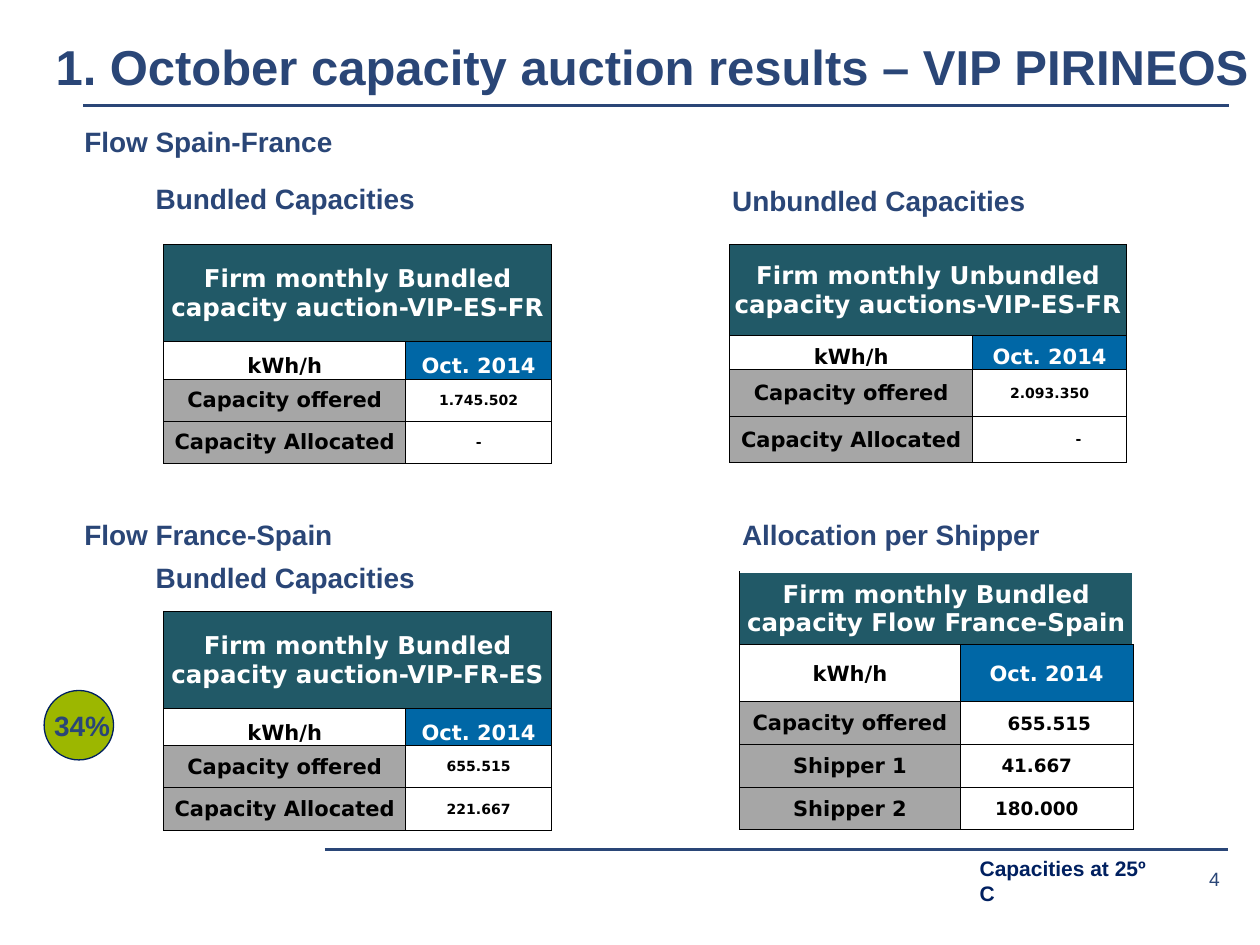
from lxml import etree
from pptx import Presentation
from pptx.dml.color import RGBColor
from pptx.enum.shapes import MSO_CONNECTOR, MSO_SHAPE
from pptx.enum.text import MSO_ANCHOR, MSO_AUTO_SIZE, PP_ALIGN
from pptx.oxml.ns import qn
from pptx.util import Cm, Pt

STRAIGHT = MSO_CONNECTOR.STRAIGHT
ELLIPSE = MSO_SHAPE.OVAL
TOP, MIDDLE, BOTTOM = MSO_ANCHOR.TOP, MSO_ANCHOR.MIDDLE, MSO_ANCHOR.BOTTOM
LEFT, CENTER, RIGHT = PP_ALIGN.LEFT, PP_ALIGN.CENTER, PP_ALIGN.RIGHT
NO_AUTOFIT = MSO_AUTO_SIZE.NONE

BLUE = RGBColor(0x2A, 0x46, 0x77)
NAVY = RGBColor(0x00, 0x20, 0x60)
TEAL = RGBColor(0x21, 0x59, 0x67)
MONTH_BLUE = RGBColor(0x00, 0x67, 0xA6)
GREY = RGBColor(0xA6, 0xA6, 0xA6)
GREEN = RGBColor(0x9C, 0xB7, 0x00)
WHITE = RGBColor(0xFF, 0xFF, 0xFF)
BLACK = RGBColor(0x00, 0x00, 0x00)

NO_MARGINS = dict.fromkeys(("margin_left", "margin_top", "margin_right", "margin_bottom"), 0)
CELL_MARGINS = {"margin_left": Cm(0.02), "margin_top": Cm(0.02),
                "margin_right": Cm(0.02), "margin_bottom": 0}
HEADING_FONT = {"name": "Arial", "size": Pt(16), "bold": True}
ALL_SIDES = ("L", "R", "T", "B")


def apply_format(target, values):
    """Set each named attribute on the target."""
    for name, value in values.items():
        setattr(target, name, value)


def write_text(frame, text, font, color, alignment=LEFT):
    """Put one formatted paragraph in a text frame."""
    paragraph = frame.paragraphs[0]
    paragraph.alignment = alignment
    run = paragraph.add_run()
    run.text = text
    apply_format(run.font, font)
    run.font.color.rgb = color


def add_text(slide, box, text, font=HEADING_FONT, color=BLUE, alignment=LEFT, frame_format=None):
    """Add a wrapping text box at a box given in centimetres."""
    frame = slide.shapes.add_textbox(*map(Cm, box)).text_frame
    apply_format(frame, {"word_wrap": True, "vertical_anchor": TOP, **(frame_format or {})})
    write_text(frame, text, font, color, alignment)


def add_rule(slide, left, top, width):
    """Draw a horizontal rule."""
    rule = slide.shapes.add_connector(STRAIGHT, Cm(left), Cm(top), Cm(left + width), Cm(top))
    rule.line.color.rgb = BLUE
    rule.line.width = Pt(1.5)
    etree.SubElement(rule._element.spPr, qn("a:effectLst"))


def add_title(slide, box, text):
    """Place the title and the rule below it."""
    left, top, width, height = box
    title = slide.shapes.title
    apply_format(title, dict(zip(("left", "top", "width", "height"), map(Cm, box))))
    apply_format(title.text_frame, {**NO_MARGINS, "word_wrap": True, "auto_size": NO_AUTOFIT,
                                    "vertical_anchor": BOTTOM})
    write_text(title.text_frame, text, {"name": "Arial", "size": Pt(28), "bold": True}, BLUE)
    add_rule(slide, left + 0.56, top + height + 0.2, 23.09)


def add_borders(cell, sides):
    """Draw thin black borders on the given sides of a cell."""
    properties = cell._tc.get_or_add_tcPr()
    for side in sides:
        line = etree.SubElement(properties, qn(f"a:ln{side}"), w=str(Pt(0.5)))
        fill = etree.SubElement(line, qn("a:solidFill"))
        etree.SubElement(fill, qn("a:srgbClr"), val=str(BLACK))


def fill_cell(cell, text, size, color, fill, anchor=MIDDLE, sides=ALL_SIDES, shift=0):
    """Format a cell, moving its centred text sideways by shift centimetres."""
    add_borders(cell, sides)
    apply_format(cell, {**CELL_MARGINS, "vertical_anchor": anchor})
    cell.margin_left += Cm(max(2 * shift, 0))
    cell.margin_right += Cm(max(-2 * shift, 0))
    cell.fill.solid()
    cell.fill.fore_color.rgb = fill
    font = {"name": "DejaVu Sans", "size": Pt(size), "bold": True}
    write_text(cell.text_frame, text, font, color, CENTER)


def add_panel(slide, corner, heading, rise, header, values, columns, rows,
              heading_indent=0.41, value_size=8, unit_anchor=BOTTOM, header_sides=ALL_SIDES):
    """Place a capacity table at a corner with its heading above."""
    left, top = corner
    add_text(slide, (left - heading_indent, top - rise, 9, 0.94), heading)
    box = (left, top, sum(columns), sum(rows))
    table = slide.shapes.add_table(len(rows), len(columns), *map(Cm, box)).table
    for column, width in zip(table.columns, columns):
        column.width = Cm(width)
    for row, height in zip(table.rows, rows):
        row.height = Cm(height)
    table.cell(0, 0).merge(table.cell(0, 1))
    fill_cell(table.cell(0, 0), header, 14, WHITE, TEAL, sides=header_sides)
    add_borders(table.cell(0, 1), [side for side in header_sides if side != "L"])
    fill_cell(table.cell(1, 0), "kWh/h", 12, BLACK, WHITE, unit_anchor)
    fill_cell(table.cell(1, 1), "Oct. 2014", 12, WHITE, MONTH_BLUE, unit_anchor)
    for index, (label, value, shift) in enumerate(values, start=2):
        fill_cell(table.cell(index, 0), label, 12, BLACK, GREY)
        fill_cell(table.cell(index, 1), value, value_size, BLACK, WHITE, shift=shift)


def add_badge(slide, box, text):
    """Place the allocated share on a green disc."""
    left, top, width, height = box
    disc = slide.shapes.add_shape(ELLIPSE, *map(Cm, box))
    disc.shadow.inherit = False
    disc.fill.solid()
    disc.fill.fore_color.rgb = GREEN
    disc.line.color.rgb = NAVY
    disc.line.width = Pt(0.75)
    add_text(slide, (left - 0.05, top + 0.23, 3.45, 0.94), text)


def add_footer(slide, box, note, number):
    """Place the bottom rule, the note and the slide number."""
    left, top, width, height = box
    add_rule(slide, left, top, width)
    add_text(slide, (left + 12.95, top, 4.14, height), note,
             {"name": "Arial", "size": Pt(12), "bold": True}, NAVY)
    add_text(slide, (left + width - 2.1, top + 0.2, 1.93, 0.8), number,
             {"name": "Arial", "size": Pt(11)}, BLUE, RIGHT,
             {**NO_MARGINS, "vertical_anchor": MIDDLE})


def main():
    """Build and save the slide."""
    presentation = Presentation()
    presentation.slide_width, presentation.slide_height = Cm(25.4), Cm(19.05)
    slide = presentation.slides.add_slide(presentation.slide_layouts[5])
    add_title(slide, (1.12, 0.91, 24.28, 1.02),
              "1. October capacity auction results – VIP PIRINEOS")

    bundled = {"columns": (4.88, 2.94), "rows": (1.96, 0.75, 0.85, 0.85)}
    flows = (
        ("Flow Spain-France", 2.39, 4.93, 1.4, "ES-FR", "1.745.502", "-"),
        ("Flow France-Spain", 10.31, 12.32, 1.14, "FR-ES", "655.515", "221.667"),
    )
    for flow, flow_top, table_top, rise, direction, offered, allocated in flows:
        add_text(slide, (1.45, flow_top, 11.25, 0.94), flow)
        add_panel(slide, (3.3, table_top), "Bundled Capacities", rise,
                  f"Firm monthly Bundled capacity auction-VIP-{direction}",
                  (("Capacity offered", offered, 0), ("Capacity Allocated", allocated, 0)),
                  **bundled)

    add_panel(slide, (14.71, 4.93), "Unbundled Capacities", 1.35,
              "Firm monthly Unbundled capacity auctions-VIP-ES-FR",
              (("Capacity offered", "2.093.350", 0), ("Capacity Allocated", "-", 0.58)),
              (4.9, 3.1), (1.83, 0.69, 0.94, 0.94), heading_indent=0.2)
    add_panel(slide, (14.91, 11.53), "Allocation per Shipper", 1.22,
              "Firm monthly Bundled capacity Flow France-Spain",
              (("Capacity offered", "655.515", 0.05), ("Shipper 1", "41.667", -0.2),
               ("Shipper 2", "180.000", -0.2)),
              (4.45, 3.48), (1.47, 1.15, 0.86, 0.86, 0.86), heading_indent=0.2,
              value_size=10.5, unit_anchor=MIDDLE, header_sides=("L", "B"))

    add_badge(slide, (0.89, 13.92, 1.4, 1.4), "34%")
    add_footer(slide, (6.55, 17.12, 18.21, 0.76), "Capacities at 25º C", "4")
    presentation.save("out.pptx")


if __name__ == "__main__":
    main()
